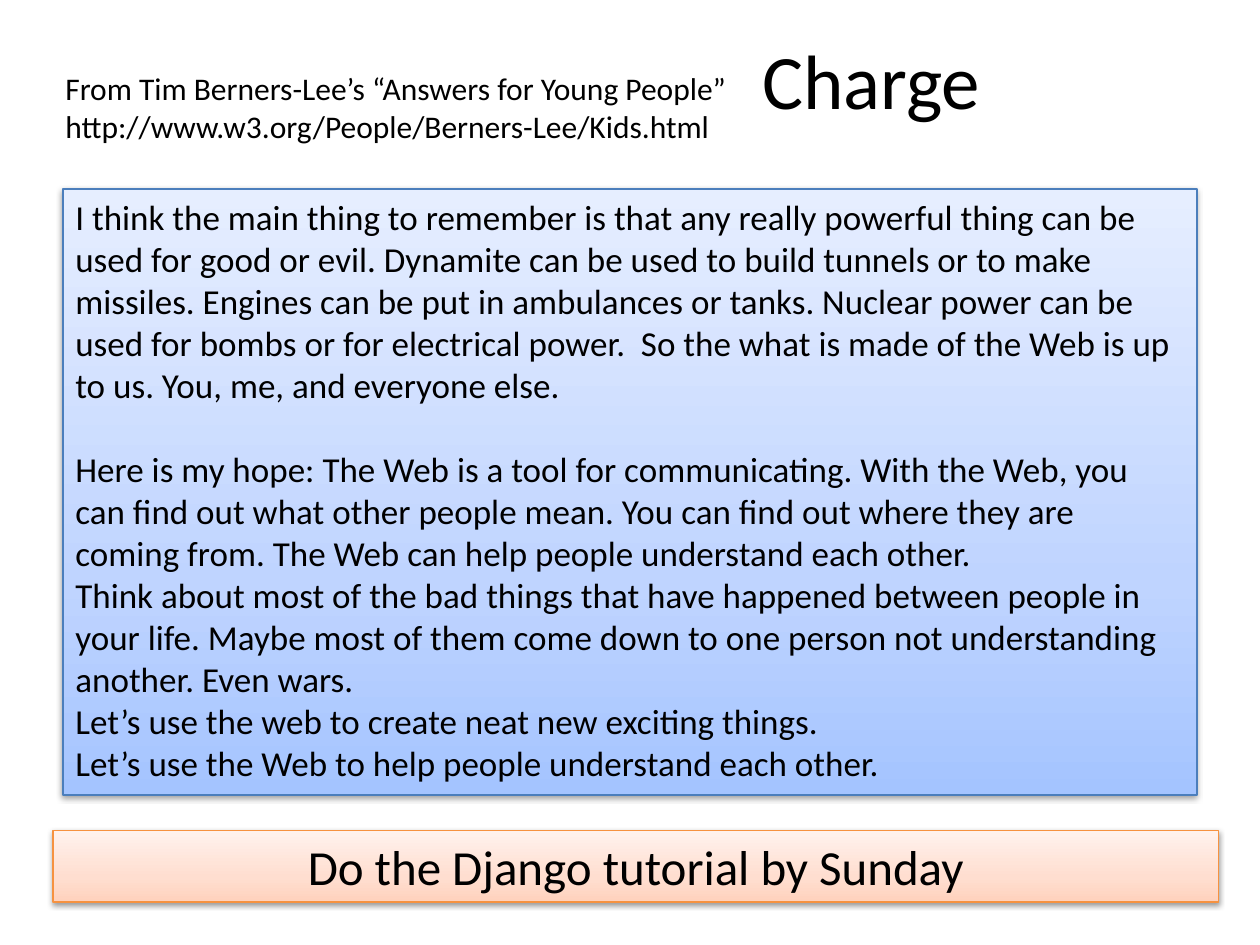
from lxml import etree
from pptx import Presentation
from pptx import util as u
from pptx.dml.color import RGBColor
from pptx.enum import shapes, text
from pptx.oxml import parse_xml
from pptx.oxml.ns import nsdecls, qn

LEFT, CENTER = text.PP_ALIGN.LEFT, text.PP_ALIGN.CENTER
BLUE = [(0, "A4C4FF"), (35, "BFD4FF"), (100, "E6EEFF")]
ORANGE = [(0, "FFD2BD"), (35, "FFDED0"), (100, "FFF2ED")]
SHADOW = (
    f'<a:outerShdw {nsdecls("a")} blurRad="{u.Pt(3.1)}" dist="{u.Pt(1.6)}" '
    'dir="5400000" rotWithShape="0"><a:srgbClr val="000000">'
    '<a:alpha val="38000"/></a:srgbClr></a:outerShdw>'
)


def color(hex_string):
    return RGBColor.from_string(hex_string)


def write(frame, lines, size=18, font="Calibri", ink="000000", align=LEFT,
          anchor=text.MSO_ANCHOR.TOP, gap_before=()):
    """Fill a frame; gap_before lists the paragraphs that follow a one-line gap."""
    frame.word_wrap = True
    frame.vertical_anchor = anchor
    for index, line in enumerate(lines):
        paragraph = frame.paragraphs[0] if index == 0 else frame.add_paragraph()
        paragraph.alignment = align
        if index in gap_before:
            paragraph.space_before = u.Pt(size * 1.2)
        run = paragraph.add_run()
        run.text = line
        run.font.size = u.Pt(size)
        run.font.name = font
        run.font.color.rgb = color(ink)


class Deck:
    """Holds the presentation, its style and the current slide."""

    line_width = u.Pt(0.75)

    def __init__(self, width, height):
        self.deck = Presentation()
        self.deck.slide_width = u.Inches(width)
        self.deck.slide_height = u.Inches(height)
        self.slide = self.deck.slides.add_slide(self.deck.slide_layouts[5])

    def title(self, box, heading):
        holder = self.slide.shapes.title
        holder.left, holder.top, holder.width, holder.height = map(u.Inches, box)
        write(holder.text_frame, [heading], size=44, align=CENTER,
              anchor=text.MSO_ANCHOR.MIDDLE)

    def note(self, box, lines, **style):
        holder = self.slide.shapes.add_textbox(*map(u.Inches, box))
        write(holder.text_frame, lines, **style)

    def panel(self, box, lines, stops, border, **style):
        panel = self.slide.shapes.add_shape(
            shapes.MSO_SHAPE.RECTANGLE, *map(u.Inches, box))
        # Three-stop gradient running upwards
        panel.fill.gradient()
        panel.fill.gradient_angle = 90
        stop_list = panel.element.spPr.find(".//" + qn("a:gsLst"))
        for old_stop in list(stop_list):
            stop_list.remove(old_stop)
        for position, shade in stops:
            stop = etree.SubElement(stop_list, qn("a:gs"), pos=str(position * 1000))
            etree.SubElement(stop, qn("a:srgbClr"), val=shade)
        panel.line.color.rgb = color(border)
        panel.line.width = self.line_width
        # Soft shadow below
        panel.shadow.inherit = False
        panel.element.spPr.find(qn("a:effectLst")).append(parse_xml(SHADOW))
        write(panel.text_frame, lines, **style)


def main():
    charge = Deck(10, 7.5)

    # Heading
    charge.title((4.33, 0, 5.17, 1.25), "Charge")

    # Task
    charge.panel((0.42, 6.59, 9.25, 0.57), ["Do the Django tutorial by Sunday"],
                 ORANGE, "F69240", size=28, align=CENTER)

    # Source of the quotation
    charge.note((0.42, 0.5, 6.42, 0.71), [
        "From Tim Berners-Lee’s “Answers for Young People”",
        "http://www.w3.org/People/Berners-Lee/Kids.html",
    ])

    # Quotation
    quotation = [
        "I think the main thing to remember is that any really powerful thing "
        "can be used for good or evil. Dynamite can be used to build tunnels or "
        "to make missiles. Engines can be put in ambulances or tanks. Nuclear "
        "power can be used for bombs or for electrical power.  So the what is "
        "made of the Web is up to us. You, me, and everyone else.",
        "Here is my hope: The Web is a tool for communicating. With the Web, you "
        "can find out what other people mean. You can find out where they are "
        "coming from. The Web can help people understand each other.",
        "Think about most of the bad things that have happened between people in "
        "your life. Maybe most of them come down to one person not understanding "
        "another. Even wars.",
        "Let’s use the web to create neat new exciting things.",
        "Let’s use the Web to help people understand each other.",
    ]
    charge.panel((0.5, 1.5, 9, 4.81), quotation, BLUE, "4B7EBC", size=20,
                 gap_before=(1,))

    charge.deck.save("out.pptx")


if __name__ == "__main__":
    main()
